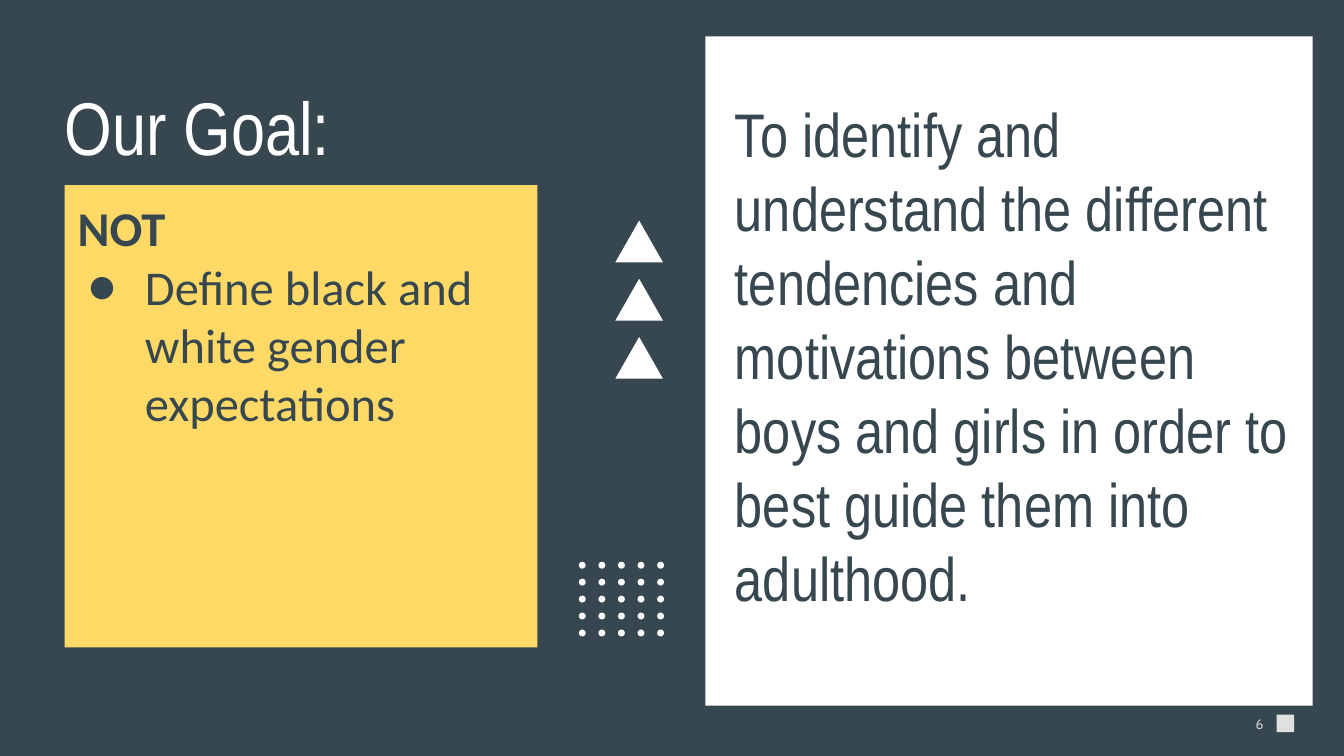
from dataclasses import dataclass

from lxml import etree
from pptx import Presentation
from pptx.dml.color import RGBColor
from pptx.enum.shapes import MSO_SHAPE
from pptx.enum.text import MSO_ANCHOR, MSO_AUTO_SIZE, PP_ALIGN
from pptx.oxml.ns import qn
from pptx.util import Cm, Pt

RECT, OVAL = MSO_SHAPE.RECTANGLE, MSO_SHAPE.OVAL
PEAK = MSO_SHAPE.ISOSCELES_TRIANGLE
TOP, MIDDLE = MSO_ANCHOR.TOP, MSO_ANCHOR.MIDDLE
LEFT, RIGHT = PP_ALIGN.LEFT, PP_ALIGN.RIGHT
FIXED = MSO_AUTO_SIZE.NONE


@dataclass(frozen=True)
class Theme:
    slate: str = "37474F"
    white: str = "FFFFFF"
    yellow: str = "FFD966"
    pale: str = "E0E0E0"
    grey: str = "CACACA"
    title: float = 40
    quote: float = 33
    body: float = 26
    number: float = 7.4
    narrow: str = "Arial Narrow"
    plain: str = "Calibri"
    small: str = "Cabin"


theme = Theme()


def draw(home, kind, box, color):
    shape = home.add_shape(kind, *[Cm(n) for n in box])
    shape.shadow.inherit = False
    shape.fill.solid()
    shape.fill.fore_color.rgb = RGBColor.from_string(color)
    shape.line.fill.background()
    return shape


def write(shape, text, *, size, font, color=theme.slate, bold=False, align=LEFT,
          anchor=TOP, space=None, more=False):
    frame = shape.text_frame
    frame.word_wrap = True
    frame.auto_size = FIXED
    frame.vertical_anchor = anchor
    frame.margin_left = frame.margin_right = Cm(0.25)
    frame.margin_top = frame.margin_bottom = Cm(0.25)
    para = frame.add_paragraph() if more else frame.paragraphs[0]
    para.alignment = align
    if space:
        para.line_spacing = space
    run = para.add_run()
    run.text = text
    run.font.size = Pt(size)
    run.font.name = font
    run.font.bold = bold
    run.font.color.rgb = RGBColor.from_string(color)
    return para


deck = Presentation()
deck.slide_width, deck.slide_height = Cm(25.4), Cm(14.29)
slide = deck.slides.add_slide(deck.slide_layouts[5])
shapes = slide.shapes
slide.background.fill.solid()
slide.background.fill.fore_color.rgb = RGBColor.from_string(theme.slate)

# Title
title = shapes.title
title.left, title.top = Cm(0.97), Cm(1.27)
title.width, title.height = Cm(9.86), Cm(11.43)
write(title, "Our Goal:", size=theme.title, font=theme.narrow, color=theme.white)

# White panel and page mark
draw(shapes, RECT, (13.33, 0.69, 11.48, 12.65), theme.white)
draw(shapes, RECT, (24.13, 13.51, 0.33, 0.33), theme.pale)
number = shapes.add_textbox(Cm(22.86), Cm(13.34), Cm(1.27), Cm(0.76))
write(number, "6", size=theme.number, font=theme.small, color=theme.grey,
      align=RIGHT, anchor=MIDDLE, space=0.8)

# Column of triangles
peaks = shapes.add_group_shape().shapes
for row in range(3):
    draw(peaks, PEAK, (11.63, 4.17 + 1.1 * row, 0.9, 0.79), theme.white)

# Grid of dots
dots = shapes.add_group_shape().shapes
for row in range(5):
    for col in range(5):
        draw(dots, OVAL, (10.94 + 0.37 * col, 10.62 + 0.32 * row, 0.13, 0.13),
             theme.white)

# Goal statement
goal = shapes.add_textbox(Cm(13.64), Cm(1.57), Cm(11.15), Cm(10.67))
write(goal, "To identify and understand the different tendencies and motivations "
      "between boys and girls in order to best guide them into adulthood.",
      size=theme.quote, font=theme.narrow)

# Yellow box with its bullet
card = draw(shapes, RECT, (1.22, 3.5, 8.94, 8.74), theme.yellow)
write(card, "NOT", size=theme.body, font=theme.plain, bold=True)
item = write(card, "Define black and white gender expectations",
             size=theme.body, font=theme.plain, more=True)
props = item._p.get_or_add_pPr()
props.set("marL", str(Cm(1.27)))
props.set("indent", str(Cm(-1.09)))
tint = etree.SubElement(props, qn("a:buClr"))
etree.SubElement(tint, qn("a:srgbClr"), val=theme.slate)
etree.SubElement(props, qn("a:buFont"), typeface=theme.plain)
etree.SubElement(props, qn("a:buChar"), char="●")

deck.save("out.pptx")
